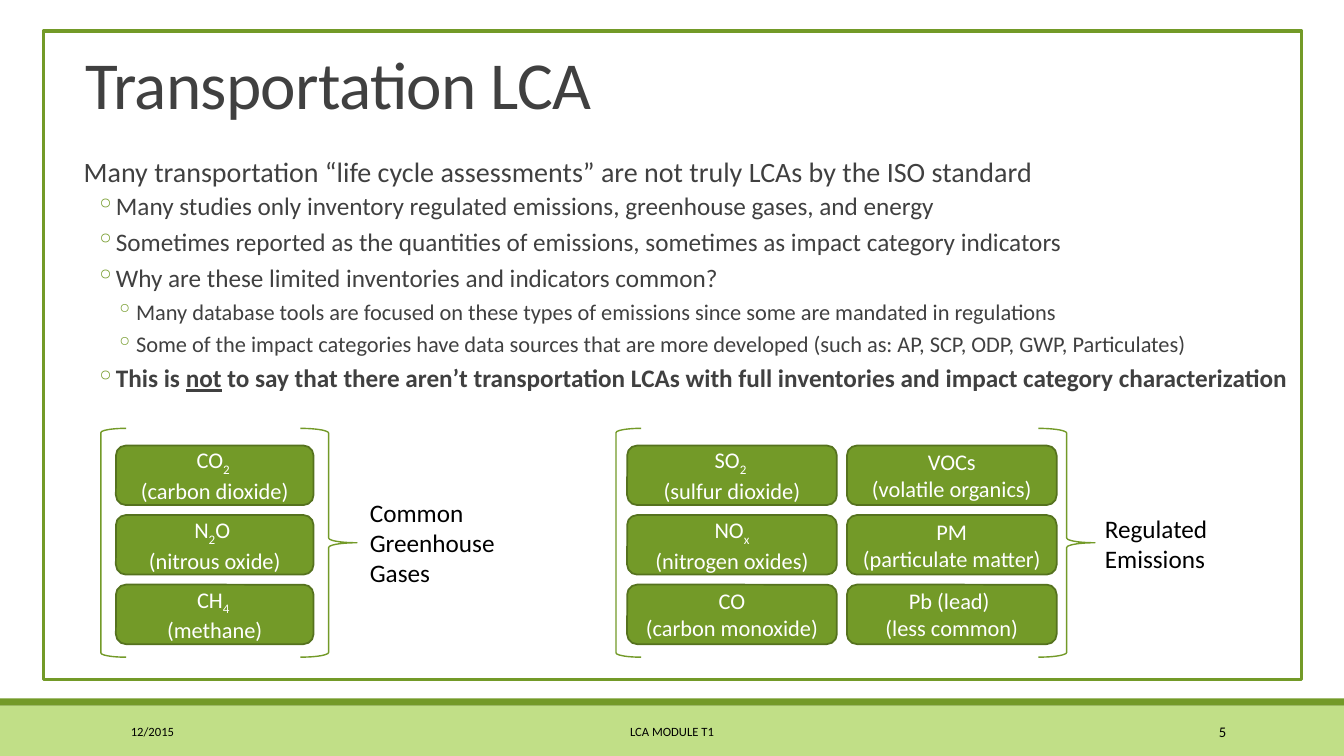
from lxml import etree
from pptx import Presentation
from pptx import util as u
from pptx.dml.color import RGBColor
from pptx.enum import shapes, text
from pptx.oxml import ns

HUES = {
    "green": "739A28", "edge": "55721E", "pale": "C1DF87",
    "grey": "404040", "black": "000000", "white": "FFFFFF",
}
KIND = shapes.MSO_SHAPE
SIDE = text.PP_ALIGN
ROW = text.MSO_ANCHOR

POINTS = [
    (0, ["Many transportation “life cycle assessments” are not truly LCAs by the ISO standard"]),
    (1, ["Many studies only inventory regulated emissions, greenhouse gases, and energy"]),
    (1, ["Sometimes reported as the quantities of emissions, sometimes as impact category indicators"]),
    (1, ["Why are these limited inventories and indicators common?"]),
    (2, ["Many database tools are focused on these types of emissions since some are mandated in regulations"]),
    (2, ["Some of the impact categories have data sources that are more developed "
         "(such as: AP, SCP, ODP, GWP, Particulates)"]),
    (1, ["This is ", "not", " to say that there aren’t transportation LCAs with full inventories "
         "and impact category characterization"]),
]
LEVELS = [(20, 0.1, 0), (18, 0.42, -0.2), (16, 0.62, -0.2)]

GASES = [
    (1.15, 1.96, [(["CO", "2 "], "(carbon dioxide)"),
                  (["N", "2", "O "], "(nitrous oxide)"),
                  (["CH", "4 "], "(methane)")]),
    (6.22, 2.08, [(["SO", "2 "], "(sulfur dioxide)"),
                  (["NO", "x"], "(nitrogen oxides)"),
                  (["CO"], "(carbon monoxide)")]),
    (8.4, 2.08, [(["VOCs"], "(volatile organics)"),
                 (["PM"], "(particulate matter)"),
                 (["Pb (lead) "], "(less common)")]),
]
GROUPS = [
    (1, 2.98, 3.57, 4.88, 1.01, "Common Greenhouse Gases"),
    (6.11, 10.3, 10.86, 5.04, 0.71, "Regulated Emissions"),
]
FOOTER = [
    (1.2, 2.7, "12/2015", 9, SIDE.LEFT),
    (4.03, 5.27, "LCA MODULE T1", 9, SIDE.CENTER),
    (10.83, 1.43, "5", 10.5, SIDE.RIGHT),
]


class Deck:
    def __init__(self, slide, face="Calibri"):
        self.slide = slide
        self.face = face

    def hue(self, name):
        return RGBColor.from_string(HUES[name])

    def shape(self, kind, box, fill=None, line=None, width=1):
        item = self.slide.shapes.add_shape(kind, *map(u.Inches, box))
        item.shadow.inherit = False
        if fill:
            item.fill.solid()
            item.fill.fore_color.rgb = self.hue(fill)
        else:
            item.fill.background()
        if line:
            item.line.color.rgb = self.hue(line)
            item.line.width = u.Pt(width)
        else:
            item.line.fill.background()
        return item

    def run(self, para, words, size, color="black"):
        run = para.add_run()
        run.text = words
        run.font.name = self.face
        run.font.size = u.Pt(size)
        run.font.color.rgb = self.hue(color)
        return run

    def frame(self, box, anchor=ROW.TOP):
        frame = self.slide.shapes.add_textbox(*map(u.Inches, box)).text_frame
        frame.word_wrap = True
        frame.vertical_anchor = anchor
        return frame

    def label(self, box, words, size, color="black", align=SIDE.LEFT, anchor=ROW.TOP):
        para = self.frame(box, anchor).paragraphs[0]
        para.alignment = align
        return para, self.run(para, words, size, color)

    def bullet(self, para, left, hang):
        props = para._p.get_or_add_pPr()
        props.set("marL", str(u.Inches(left)))
        props.set("indent", str(u.Inches(hang)))
        if hang:
            tint = etree.SubElement(props, ns.qn("a:buClr"))
            etree.SubElement(tint, ns.qn("a:srgbClr"), val=HUES["green"])
            etree.SubElement(props, ns.qn("a:buChar"), char="◦")

    def outline(self, box, points):
        frame = self.frame(box)
        frame.margin_left = frame.margin_right = 0
        for at, (level, parts) in enumerate(points):
            para = frame.add_paragraph() if at else frame.paragraphs[0]
            size, left, hang = LEVELS[level]
            self.bullet(para, left, hang)
            para.level = level
            para.line_spacing = 0.9
            para.space_before = u.Pt(2 if at else 0)
            para.space_after = u.Pt(4 if level else 2)
            for spot, words in enumerate(parts):
                font = self.run(para, words, size, "grey").font
                font.bold = len(parts) > 1
                font.underline = spot == 1

    def gas(self, box, symbol, name):
        item = self.shape(KIND.ROUNDED_RECTANGLE, box, "green", "edge", 1.25)
        frame = item.text_frame
        frame.word_wrap = True
        frame.vertical_anchor = ROW.MIDDLE
        first, last = frame.paragraphs[0], frame.add_paragraph()
        first.alignment = last.alignment = SIDE.CENTER
        for spot, words in enumerate(symbol):
            run = self.run(first, words, 16, "white")
            if spot == 1:
                run._r.get_or_add_rPr().set("baseline", "-25000")
        self.run(last, name, 16, "white")


def main():
    show = Presentation()
    show.slide_width, show.slide_height = u.Inches(13.33), u.Inches(7.5)
    deck = Deck(show.slides.add_slide(show.slide_layouts[6]))

    deck.shape(KIND.RECTANGLE, (0, 7, 13.33, 0.5), "pale")
    deck.shape(KIND.RECTANGLE, (0, 6.93, 13.33, 0.07), "green")
    deck.shape(KIND.RECTANGLE, (0.43, 0.31, 12.48, 6.43), line="green", width=2.5)

    para, run = deck.label((0.75, 0.3, 11, 0.97), "Transportation LCA", 48, "grey",
                           anchor=ROW.BOTTOM)
    para.line_spacing = 0.85
    run._r.get_or_add_rPr().set("spc", "-50")
    deck.outline((0.73, 1.52, 12.07, 5), POINTS)

    for left, width, gases in GASES:
        for row, (symbol, name) in enumerate(gases):
            deck.gas((left, 4.42 + 0.69 * row, width, 0.59), symbol, name)

    for left, brace, side, top, high, words in GROUPS:
        deck.shape(KIND.RIGHT_BRACE, (brace, 4.25, 0.56, 2.27), line="green")
        hook = deck.shape(KIND.LEFT_BRACKET, (left, 4.25, 0.25, 2.27), line="green")
        hook.adjustments[0] = 0.17
        deck.label((side, top, 1.5, high), words, 18)

    for left, width, words, size, align in FOOTER:
        deck.label((left, 7.06, width, 0.4), words, size, align=align, anchor=ROW.MIDDLE)

    show.save("out.pptx")


if __name__ == "__main__":
    main()
